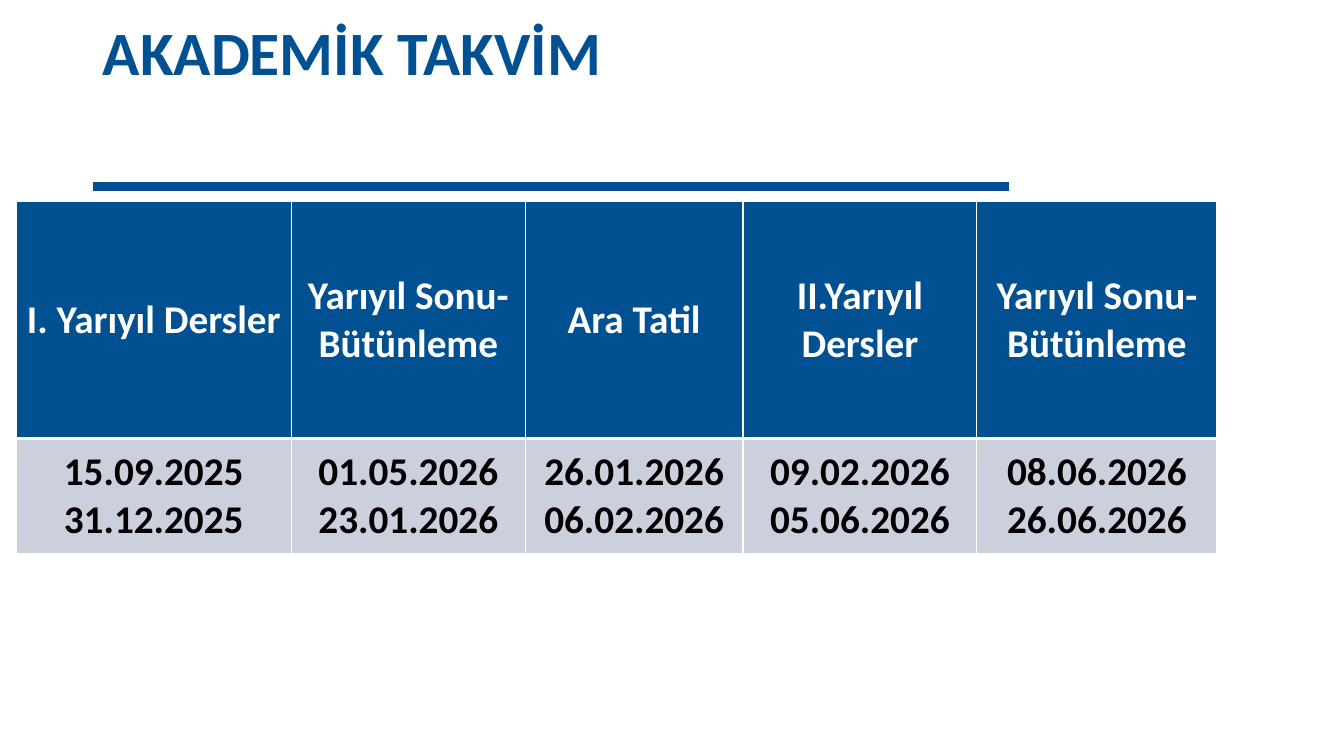
"""Build the academic calendar slide."""
from dataclasses import dataclass

from lxml.etree import SubElement
from pptx import Presentation
from pptx.dml.color import RGBColor
from pptx.enum.shapes import MSO_CONNECTOR as Connector
from pptx.enum.text import MSO_ANCHOR as Anchor, PP_ALIGN as Align
from pptx.oxml.ns import qn
from pptx.util import Inches, Pt

TITLE = "AKADEMİK TAKVİM"
PERIODS = [
    ("I. Yarıyıl Dersler", "15.09.2025", "31.12.2025", 2.73),
    ("Yarıyıl Sonu- Bütünleme", "01.05.2026", "23.01.2026", 2.32),
    ("Ara Tatil", "26.01.2026", "06.02.2026", 2.16),
    ("II.Yarıyıl Dersler", "09.02.2026", "05.06.2026", 2.32),
    ("Yarıyıl Sonu- Bütünleme", "08.06.2026", "26.06.2026", 2.38),
]
ROW_HEIGHTS = (2.35, 1.14)


@dataclass(frozen=True)
class Theme:
    """Colours, font and type sizes of the slide."""
    blue: str = "015092"
    grey: str = "CCD0DC"
    white: str = "FFFFFF"
    black: str = "000000"
    font: str = "Calibri"
    title_size: int = 44
    cell_size: int = 28


THEME = Theme()


def style_text(frame, size, colour, align):
    """Format every paragraph and run of a text frame."""
    for paragraph in frame.paragraphs:
        paragraph.alignment = align
        for run in paragraph.runs:
            run.font.name = THEME.font
            run.font.size = Pt(size)
            run.font.bold = True
            run.font.color.rgb = RGBColor.from_string(colour)


def add_border(cell, side, width):
    """Draw one white cell border of the given width in points."""
    border = SubElement(cell._tc.get_or_add_tcPr(), qn(f"a:{side}"), w=str(Pt(width)))
    fill = SubElement(border, qn("a:solidFill"))
    SubElement(fill, qn("a:srgbClr"), val=THEME.white)


def fill_cell(cell, text, background, colour, top, bottom):
    """Write and format one table cell."""
    for side, width in (("lnL", 1), ("lnR", 1), ("lnT", top), ("lnB", bottom)):
        add_border(cell, side, width)
    cell.fill.solid()
    cell.fill.fore_color.rgb = RGBColor.from_string(background)
    cell.vertical_anchor = Anchor.MIDDLE
    cell.text_frame.text = text
    style_text(cell.text_frame, THEME.cell_size, colour, Align.CENTER)


def add_title(slide):
    """Place the title and the rule below it."""
    title = slide.shapes.title
    title.left, title.top = Inches(0.92), Inches(0.05)
    title.width, title.height = Inches(9.1), Inches(1)
    title.text_frame.text = TITLE
    title.text_frame.vertical_anchor = Anchor.MIDDLE
    title.text_frame.paragraphs[0].line_spacing = 0.9
    style_text(title.text_frame, THEME.title_size, THEME.blue, Align.LEFT)

    rule = slide.shapes.add_connector(
        Connector.STRAIGHT, Inches(0.92), Inches(1.85), Inches(10.01), Inches(1.85))
    rule.line.color.rgb = RGBColor.from_string(THEME.blue)
    rule.line.width = Pt(6)
    SubElement(rule._element.spPr, qn("a:effectLst"))


def add_calendar(slide):
    """Add the table with one column per period."""
    total_width = sum(width for *_, width in PERIODS)
    calendar = slide.shapes.add_table(
        len(ROW_HEIGHTS), len(PERIODS), Inches(0.16), Inches(2),
        Inches(total_width), Inches(sum(ROW_HEIGHTS))).table
    for row, height in zip(calendar.rows, ROW_HEIGHTS):
        row.height = Inches(height)
    for column, (period, start, end, width) in enumerate(PERIODS):
        calendar.columns[column].width = Inches(width)
        fill_cell(calendar.cell(0, column), period, THEME.blue, THEME.white, 1, 3)
        fill_cell(calendar.cell(1, column), f"{start}\n{end}", THEME.grey, THEME.black, 3, 1)


def main():
    """Create and save the presentation."""
    deck = Presentation()
    deck.slide_width, deck.slide_height = Inches(13.33), Inches(7.5)
    slide = deck.slides.add_slide(deck.slide_layouts[5])
    add_title(slide)
    add_calendar(slide)
    deck.save("out.pptx")


if __name__ == "__main__":
    main()
